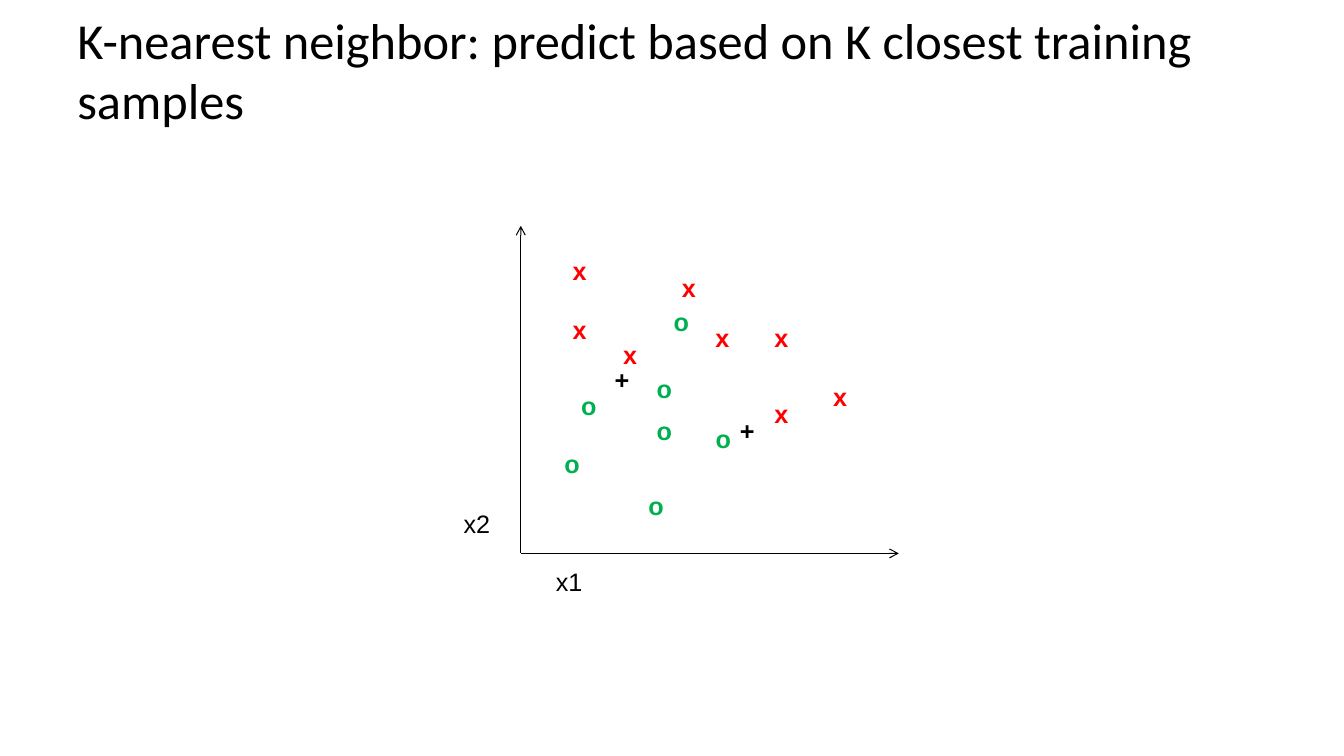
import dataclasses

import lxml.etree
import pptx
import pptx.dml.color
import pptx.enum.shapes
import pptx.enum.text
import pptx.oxml.ns
import pptx.util


@dataclasses.dataclass(frozen=True)
class Theme:
    title_font: str = "Calibri"
    label_font: str = "Arial"
    black: str = "000000"
    red: str = "FF0000"
    green: str = "00B050"
    title_size: float = 36
    label_size: float = 18
    axis_width: float = 0.75


class ScatterSlide:
    def __init__(self, presentation, theme):
        self.theme = theme
        self.slide = presentation.slides.add_slide(presentation.slide_layouts[5])

    def format_runs(self, text_frame, name, size, color, bold=False):
        for paragraph in text_frame.paragraphs:
            paragraph.alignment = pptx.enum.text.PP_ALIGN.LEFT
            for run in paragraph.runs:
                run.font.name = name
                run.font.size = pptx.util.Pt(size)
                run.font.bold = bold
                run.font.color.rgb = pptx.dml.color.RGBColor.from_string(color)

    def add_title(self, text, left, top, width, height):
        title = self.slide.shapes.title
        title.left, title.top = pptx.util.Pt(left), pptx.util.Pt(top)
        title.width, title.height = pptx.util.Pt(width), pptx.util.Pt(height)
        text_frame = title.text_frame
        text_frame.text = text
        text_frame.word_wrap = True
        text_frame.auto_size = pptx.enum.text.MSO_AUTO_SIZE.NONE
        text_frame.vertical_anchor = pptx.enum.text.MSO_ANCHOR.MIDDLE
        self.format_runs(text_frame, self.theme.title_font, self.theme.title_size, self.theme.black)

    def add_label(self, text, left, top, width, color, bold=False):
        box = self.slide.shapes.add_textbox(
            pptx.util.Pt(left), pptx.util.Pt(top), pptx.util.Pt(width), pptx.util.Pt(29)
        )
        text_frame = box.text_frame
        text_frame.text = text
        text_frame.word_wrap = False
        text_frame.auto_size = pptx.enum.text.MSO_AUTO_SIZE.SHAPE_TO_FIT_TEXT
        self.format_runs(text_frame, self.theme.label_font, self.theme.label_size, color, bold)

    def add_samples(self, symbol, width, color, positions):
        for left, top in positions:
            self.add_label(symbol, left, top, width, color, bold=True)

    def add_axis(self, origin, end):
        axis = self.slide.shapes.add_connector(
            pptx.enum.shapes.MSO_CONNECTOR.STRAIGHT,
            *(pptx.util.Pt(value) for value in (*origin, *end)),
        )
        axis.line.width = pptx.util.Pt(self.theme.axis_width)
        axis.line.color.rgb = pptx.dml.color.RGBColor.from_string(self.theme.black)
        qualified = pptx.oxml.ns.qn
        lxml.etree.SubElement(axis.line._get_or_add_ln(), qualified("a:tailEnd"), type="arrow")
        lxml.etree.SubElement(axis._element.spPr, qualified("a:effectLst"))


def main():
    presentation = pptx.Presentation()
    presentation.slide_width = pptx.util.Pt(960)
    presentation.slide_height = pptx.util.Pt(540)
    theme = Theme()
    slide = ScatterSlide(presentation, theme)

    slide.add_title(
        "K-nearest neighbor: predict based on K closest training samples", 48, 13.5, 864, 72
    )

    crosses = [(504, 227), (546, 227), (546, 281), (588, 269),
               (402, 179), (402, 221), (480, 191), (438, 239)]
    circles = [(474, 215), (504, 299), (396, 317), (408, 275),
               (456, 347), (462, 293), (462, 263)]
    queries = [(432, 257), (521.5, 293)]
    slide.add_samples("x", 24.5, theme.red, crosses)
    slide.add_samples("o", 26, theme.green, circles)

    origin = (372, 395.3)
    for end in [(372, 161.3), (642, 395.3)]:
        slide.add_axis(origin, end)
    slide.add_label("x2", 324, 359.3, 34, theme.black)
    slide.add_label("x1", 390, 401, 34, theme.black)

    slide.add_samples("+", 25, theme.black, queries)
    presentation.save("out.pptx")


if __name__ == "__main__":
    main()
